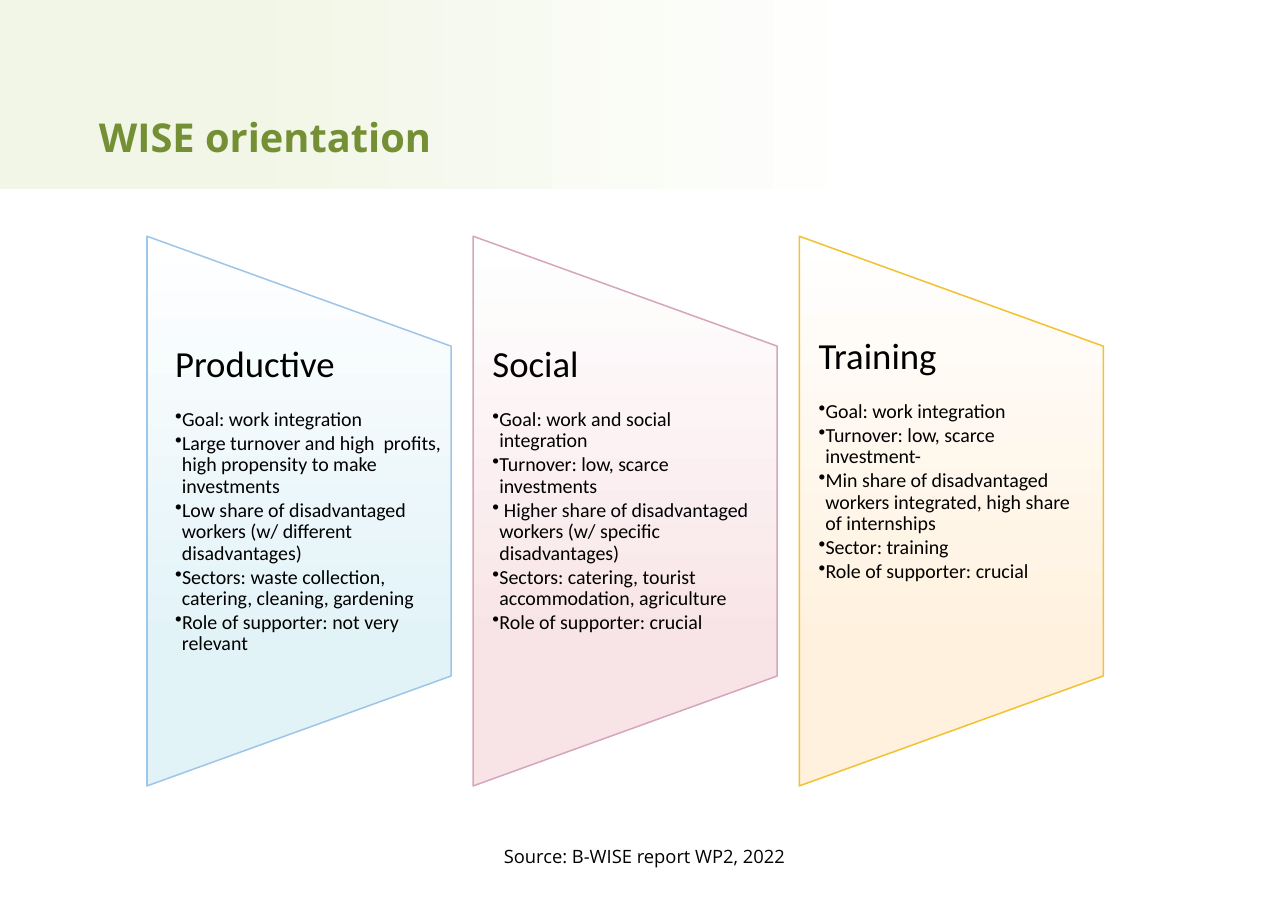
from dataclasses import dataclass

from lxml import etree
from pptx import Presentation
from pptx.dml.color import RGBColor
from pptx.enum.shapes import MSO_SHAPE
from pptx.enum.text import MSO_ANCHOR, PP_ALIGN
from pptx.oxml.ns import qn
from pptx.util import Pt

RECTANGLE = MSO_SHAPE.RECTANGLE
TRAPEZOID = MSO_SHAPE.FLOWCHART_MANUAL_OPERATION
TOP, BOTTOM = MSO_ANCHOR.TOP, MSO_ANCHOR.BOTTOM
CENTER = PP_ALIGN.CENTER


@dataclass(frozen=True)
class Theme:
    title_font: str = "Open Sans"
    body_font: str = "Calibri"
    white: str = "FFFFFF"
    black: str = "000000"
    title_green: str = "758F35"
    banner_green: str = "F1F6E6"
    title_size: float = 26
    heading_size: float = 24
    bullet_size: float = 13
    source_size: float = 12


THEME = Theme()

PANEL_LEFT, PANEL_TOP, PANEL_STEP = 96.1, 154.4, 213.12
PANEL_WIDTH, PANEL_HEIGHT = 198.7, 359.3
TEXT_WIDTH, TEXT_HEIGHT = 198.7, 216

# heading, fill, outline, text left, text top, bullets
ORIENTATIONS = [
    ("Productive", "E2F3F8", "9FC5E8", 102.2, 226.1, [
        "Goal: work integration",
        "Large turnover and high  profits, high propensity to make investments",
        "Low share of disadvantaged workers (w/ different disadvantages)",
        "Sectors: waste collection, catering, cleaning, gardening",
        "Role of supporter: not very relevant",
    ]),
    ("Social", "F8E4E7", "D5A6BD", 309.6, 226.1, [
        "Goal: work and social integration",
        "Turnover: low, scarce investments",
        " Higher share of disadvantaged workers (w/ specific disadvantages)",
        "Sectors: catering, tourist accommodation, agriculture",
        "Role of supporter: crucial",
    ]),
    ("Training", "FFF1DE", "F1C232", 522.7, 221, [
        "Goal: work integration",
        "Turnover: low, scarce investment-",
        "Min share of disadvantaged workers integrated, high share of internships",
        "Sector: training",
        "Role of supporter: crucial",
    ]),
]


def add_gradient_shape(slide, kind, left, top, width, height, color, outline=None):
    """Add a shape that fades from white on its right to a colour on its left."""
    sp = slide.shapes.add_shape(kind, Pt(left), Pt(top), Pt(width), Pt(height))
    sp.shadow.inherit = False
    sp.fill.gradient()
    sp.fill.gradient_angle = 180
    stops = zip(sp.fill.gradient_stops, (0, 0.75), (THEME.white, color))
    for stop, position, rgb in stops:
        stop.position = position
        stop.color.rgb = RGBColor.from_string(rgb)
    if outline:
        sp.line.color.rgb = RGBColor.from_string(outline)
        sp.line.width = Pt(1)
    else:
        sp.line.fill.background()
    return sp


def add_text_frame(slide, left, top, width, height, inset_x, inset_y, anchor=TOP):
    box = slide.shapes.add_textbox(Pt(left), Pt(top), Pt(width), Pt(height))
    tf = box.text_frame
    tf.word_wrap = True
    tf.vertical_anchor = anchor
    tf.margin_left = tf.margin_right = Pt(inset_x)
    tf.margin_top = tf.margin_bottom = Pt(inset_y)
    return tf


def write(p, text, font, size, color=THEME.black, bold=False, spacing=0.9):
    p.line_spacing = spacing
    r = p.add_run()
    r.text = text
    r.font.name = font
    r.font.size = Pt(size)
    r.font.bold = bold
    r.font.color.rgb = RGBColor.from_string(color)


def set_bullet(p):
    pPr = p._p.get_or_add_pPr()
    pPr.set("marL", str(Pt(4.5)))
    pPr.set("indent", str(Pt(-6.75)))
    color = etree.SubElement(pPr, qn("a:buClr"))
    etree.SubElement(color, qn("a:srgbClr"), val=THEME.black)
    etree.SubElement(pPr, qn("a:buChar"), char="•")


def add_panel(slide, index, heading, fill, outline, text_left, text_top, bullets):
    """Add a trapezoid turned a quarter left, with its heading and bullets."""
    center_x = PANEL_LEFT + index * PANEL_STEP + PANEL_WIDTH / 2
    center_y = PANEL_TOP + PANEL_HEIGHT / 2
    sp = add_gradient_shape(slide, TRAPEZOID, center_x - PANEL_HEIGHT / 2,
                            center_y - PANEL_WIDTH / 2, PANEL_HEIGHT, PANEL_WIDTH,
                            fill, outline)
    sp.rotation = 270

    tf = add_text_frame(slide, text_left, text_top, TEXT_WIDTH, TEXT_HEIGHT, 12.25, 0)
    write(tf.paragraphs[0], heading, THEME.body_font, THEME.heading_size)
    for number, bullet in enumerate(bullets):
        p = tf.add_paragraph()
        set_bullet(p)
        p.space_before = Pt(1.6 if number else 15.3)
        write(p, bullet, THEME.body_font, THEME.bullet_size)


def add_title(slide, text):
    add_gradient_shape(slide, RECTANGLE, 0, 0, 577.4, 123.8, THEME.banner_green)
    tf = add_text_frame(slide, 57.6, 0, 688.3, 108.7, 7.2, 3.6, BOTTOM)
    write(tf.paragraphs[0], text, THEME.title_font, THEME.title_size,
          THEME.title_green, bold=True)


def add_source(slide, text):
    tf = add_text_frame(slide, 303.1, 542.9, 236.2, 28.8, 7.2, 7.2)
    p = tf.paragraphs[0]
    p.alignment = CENTER
    p.space_after = Pt(6)
    write(p, text, THEME.title_font, THEME.source_size, spacing=1.15)


def main():
    prs = Presentation()
    prs.slide_width, prs.slide_height = Pt(841.68), Pt(595.44)
    slide = prs.slides.add_slide(prs.slide_layouts[6])
    add_title(slide, "WISE orientation")
    for index, orientation in enumerate(ORIENTATIONS):
        add_panel(slide, index, *orientation)
    add_source(slide, "Source: B-WISE report WP2, 2022")
    prs.save("out.pptx")


if __name__ == "__main__":
    main()
